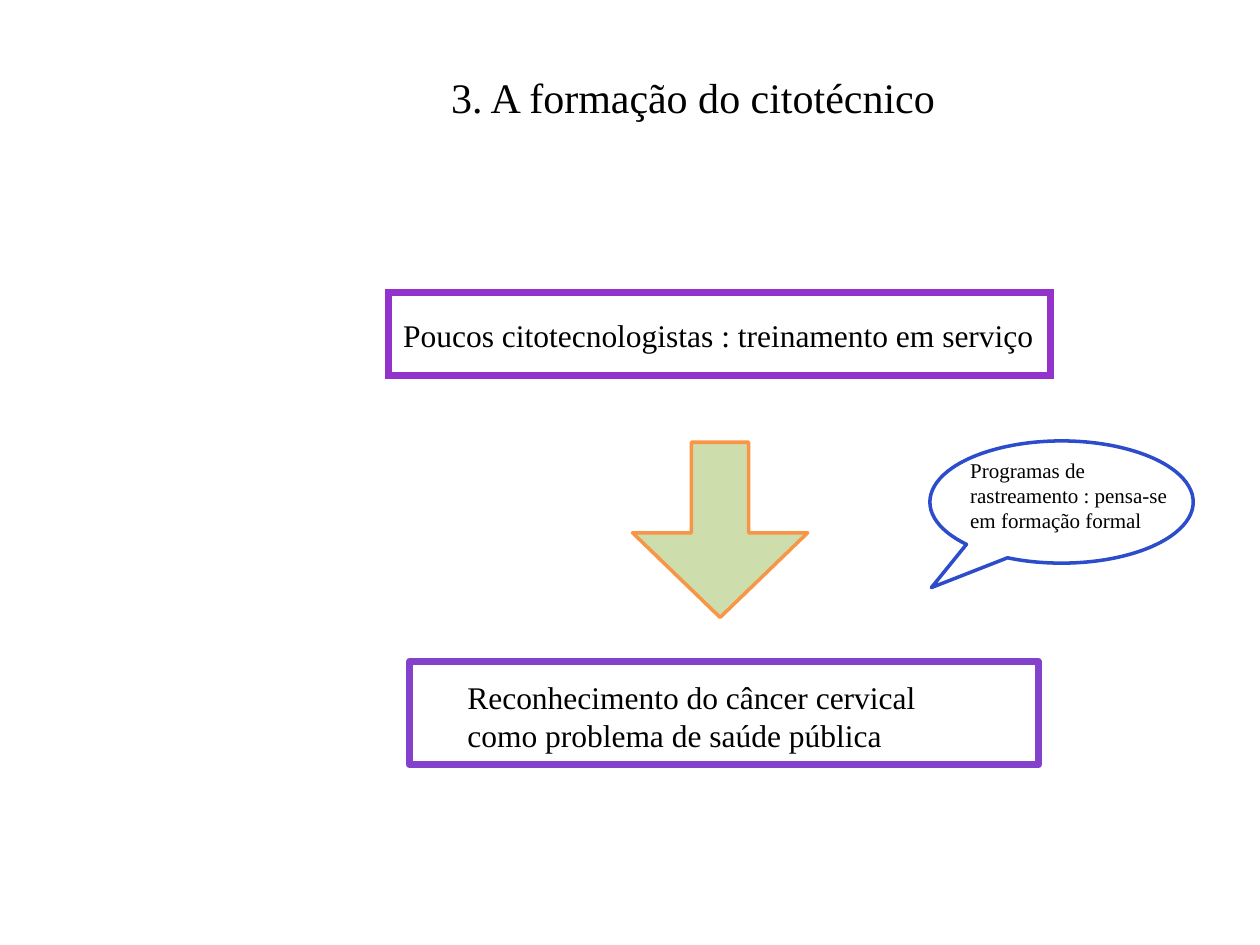
from dataclasses import dataclass
from typing import Optional

from lxml.etree import SubElement as Sub
from pptx import Presentation
from pptx.dml.color import RGBColor as Rgb
from pptx.enum.shapes import MSO_SHAPE as Kind
from pptx.enum.text import MSO_ANCHOR as Anchor, MSO_AUTO_SIZE as Auto, PP_ALIGN as Align
from pptx.oxml.ns import qn
from pptx.util import Inches, Pt


@dataclass(frozen=True)
class Theme:
    """Colours, font and type sizes."""
    font: str = "Times New Roman"
    ink: str = "000000"
    paper: str = "FFFFFF"
    purple: str = "9432CC"
    violet: str = "8441CC"
    green: str = "CDDDAC"
    orange: str = "F79646"
    blue: str = "2D4CCC"
    title: int = 24
    body: int = 18
    note: int = 12
    thick: int = 4
    thin: int = 2


@dataclass(frozen=True)
class Figure:
    """A preset shape with its place and look."""
    kind: Kind
    box: tuple
    line: str
    width: int
    fill: Optional[str] = None
    adj: tuple = ()
    sharp: bool = False


@dataclass(frozen=True)
class Label:
    """A text with its place and size."""
    text: str
    box: tuple
    size: int
    wrap: bool = True


THEME = Theme()

FIGURES = [
    Figure(Kind.RECTANGLE, (3.08, 2.32, 5.26, 0.66), THEME.purple, THEME.thick, sharp=True),
    Figure(Kind.DOWN_ARROW, (5.02, 3.51, 1.39, 1.39), THEME.orange, THEME.thin,
           THEME.green, (0.327, 0.483)),
    Figure(Kind.RECTANGLE, (3.25, 5.25, 4.99, 0.82), THEME.violet, THEME.thick, THEME.paper),
    Figure(Kind.OVAL_CALLOUT, (7.38, 3.5, 2.09, 0.97), THEME.blue, THEME.thin,
           THEME.paper, (-0.494, 0.7)),
]

TITLE = Label("3. A formação do citotécnico", (3.53, 0.52, 3.96, 0.46), THEME.title, False)

LABELS = [
    Label("Poucos citotecnologistas : treinamento em serviço",
          (3.15, 2.46, 5.18, 0.38), THEME.body, False),
    Label("Reconhecimento do câncer cervical como problema de saúde pública",
          (3.66, 5.33, 4.1, 0.67), THEME.body),
    Label("Programas de rastreamento : pensa-se\nem formação formal",
          (7.65, 3.58, 1.91, 0.72), THEME.note),
]


def draw(slide, fig: Figure) -> None:
    """Draw one preset shape."""
    shape = slide.shapes.add_shape(fig.kind, *map(Inches, fig.box))
    shape.shadow.inherit = False
    for i, val in enumerate(fig.adj):
        shape.adjustments[i] = val
    if fig.fill:
        shape.fill.solid()
        shape.fill.fore_color.rgb = Rgb.from_string(fig.fill)
    else:
        shape.fill.background()
    shape.line.color.rgb = Rgb.from_string(fig.line)
    shape.line.width = Pt(fig.width)
    if fig.sharp:
        Sub(shape.element.spPr.find(qn("a:ln")), qn("a:miter"), lim="800000")


def write(shape, text: str, *, size: int, wrap: bool = True, color: str = THEME.ink) -> None:
    """Fill a shape with left-aligned text."""
    frame = shape.text_frame
    frame.text = text
    frame.word_wrap = wrap
    frame.auto_size = Auto.NONE
    frame.vertical_anchor = Anchor.TOP
    frame.margin_left = frame.margin_right = Inches(0.05)
    frame.margin_top = frame.margin_bottom = Inches(0.05)
    for para in frame.paragraphs:
        para.alignment = Align.LEFT
        for run in para.runs:
            run.font.name = THEME.font
            run.font.size = Pt(size)
            run.font.color.rgb = Rgb.from_string(color)


def main() -> None:
    """Build and save the slide."""
    deck = Presentation()
    deck.slide_width, deck.slide_height = Inches(10), Inches(7.5)
    slide = deck.slides.add_slide(deck.slide_layouts[5])
    head = slide.shapes.title
    head.left, head.top, head.width, head.height = map(Inches, TITLE.box)
    write(head, TITLE.text, size=TITLE.size, wrap=TITLE.wrap)
    for fig in FIGURES:
        draw(slide, fig)
    for label in LABELS:
        box = slide.shapes.add_textbox(*map(Inches, label.box))
        write(box, label.text, size=label.size, wrap=label.wrap)
    deck.save("out.pptx")


if __name__ == "__main__":
    main()
